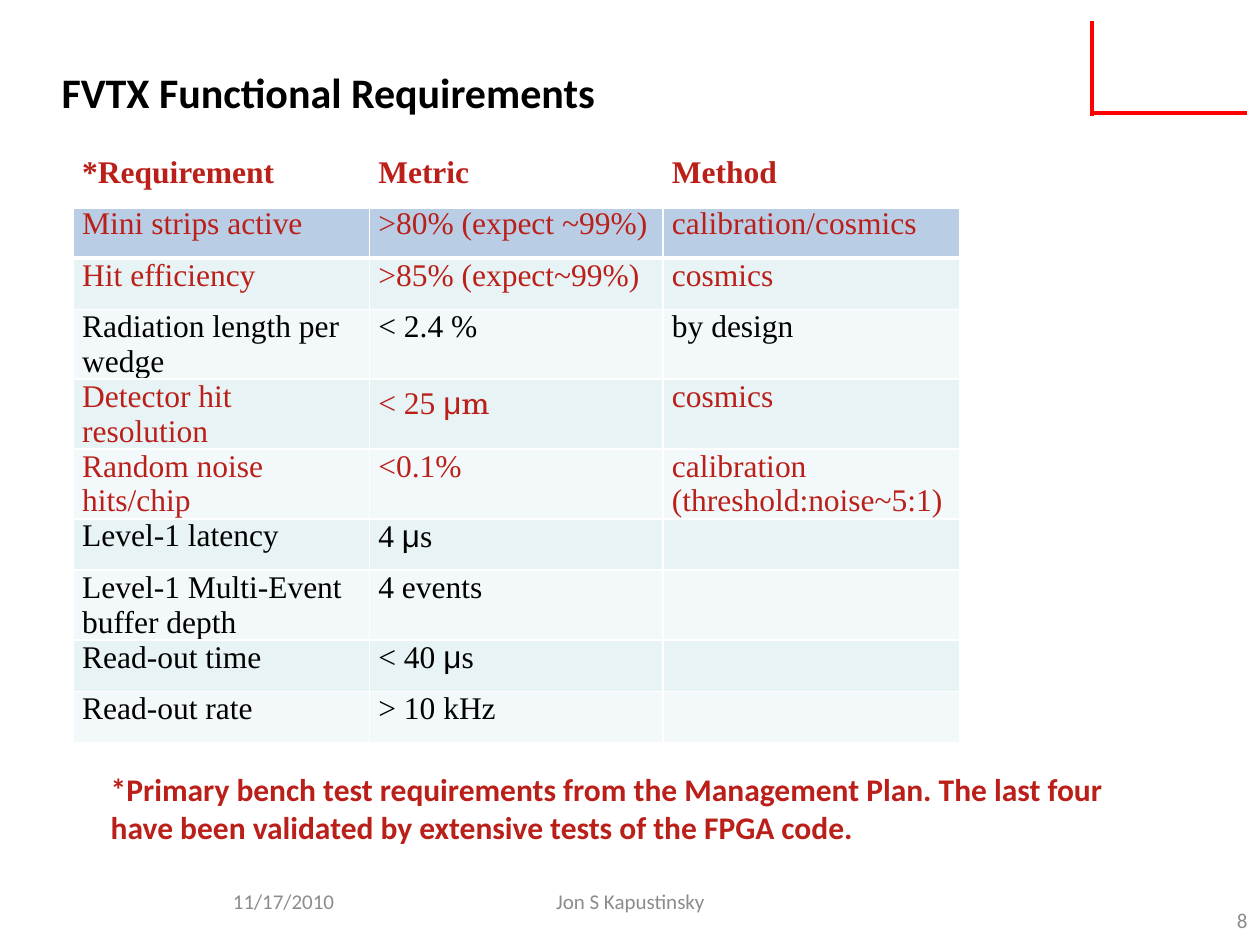
import pptx
import pptx.dml.color
import pptx.enum.shapes
import pptx.enum.text
import pptx.oxml
import pptx.oxml.ns
import pptx.util

Pt = pptx.util.Pt
ALIGN = pptx.enum.text.PP_ALIGN
ANCHOR = pptx.enum.text.MSO_ANCHOR
NS = pptx.oxml.ns.nsdecls("a")
HEX = {"red": "BA1F19", "black": "000000", "gray": "8C8C8C", "line": "FF0000",
       "white": "FFFFFF", "blue": "B9CDE5", "mint": "E7F3F4", "pale": "F3F9FA"}


def style(font, size, color, name, bold=False):
    font.size, font.name, font.bold = Pt(size), name, bold
    font.color.rgb = pptx.dml.color.RGBColor.from_string(HEX[color])


def edge(cell, side, width):
    """Draw a white border on one side (L, R, T or B) of a cell."""
    cell._tc.get_or_add_tcPr().append(pptx.oxml.parse_xml(
        f'<a:ln{side} {NS} w="{Pt(width)}"><a:solidFill>'
        f'<a:srgbClr val="{HEX["white"]}"/></a:solidFill></a:ln{side}>'))


deck = pptx.Presentation()
deck.slide_width, deck.slide_height = Pt(720), Pt(540)
slide = deck.slides.add_slide(deck.slide_layouts[6])

# Red corner
for ends in [(622.8, 64.8, 712.8, 64.8), (624.2, 12.2, 624.2, 66.2)]:
    line = slide.shapes.add_connector(
        pptx.enum.shapes.MSO_CONNECTOR.STRAIGHT, *map(Pt, ends))
    line.line.width = Pt(2.25)
    line.line.color.rgb = pptx.dml.color.RGBColor.from_string(HEX["line"])
    line._element.spPr.append(pptx.oxml.parse_xml(f"<a:effectLst {NS}/>"))

# Requirements table
rows = [
    ("red", "*Requirement", "Metric", "Method"),
    ("red", "Mini strips active", ">80% (expect ~99%)", "calibration/cosmics"),
    ("red", "Hit efficiency", ">85% (expect~99%)", "cosmics"),
    ("black", "Radiation length per wedge", "< 2.4 %", "by design"),
    ("red", "Detector hit resolution", "< 25 μm", "cosmics"),
    ("red", "Random noise hits/chip", "<0.1%", "calibration\n(threshold:noise~5:1)"),
    ("black", "Level-1 latency", "4 μs", ""),
    ("black", "Level-1 Multi-Event buffer depth", "4 events", ""),
    ("black", "Read-out time", "< 40 μs", ""),
    ("black", "Read-out rate", "> 10 kHz", ""),
]
widths = [169.2, 167.8, 169.9]
high = 29.4
table = slide.shapes.add_table(len(rows), 3, Pt(41.8), Pt(88.6),
                               Pt(sum(widths)), Pt(high * len(rows))).table
for col, width in zip(table.columns, widths):
    col.width = Pt(width)

for i, (color, *texts) in enumerate(rows):
    table.rows[i].height = Pt(high)
    for j, text in enumerate(texts):
        cell = table.cell(i, j)
        cell.margin_left = cell.margin_right = Pt(5.2)
        cell.margin_top = cell.margin_bottom = 0
        edge(cell, "L", 1)
        edge(cell, "R", 1)
        edge(cell, "T", 3 if i in (1, 2) else 1)
        edge(cell, "B", 3 if i in (0, 1) else 1)
        if i == 0:
            cell.fill.background()
        else:
            fill = "blue" if i == 1 else ("pale", "mint")[(i + 1) % 2]
            cell.fill.solid()
            cell.fill.fore_color.rgb = pptx.dml.color.RGBColor.from_string(HEX[fill])
        frame = cell.text_frame
        frame.text = text
        for para in frame.paragraphs:
            if "μ" in text:
                para.clear()
                for part in text.partition("μ"):
                    run = para.add_run()
                    run.text = part
                    if part == "μ":
                        run.font.name = "Arial"
                    elif part == "m":
                        run.font.name = "TeX Gyre Schola"
            style(para.font, 18, color, "Times New Roman", i == 0)

# Title, note and footer
note = ("*Primary bench test requirements from the Management Plan. "
        "The last four have been validated by extensive tests of the FPGA code.")
for text, spot, size, color, align, anchor in [
    (note, (56.2, 436.3, 590.4, 51.1), 18, "red", ALIGN.LEFT, ANCHOR.TOP),
    ("FVTX Functional Requirements", (28.1, 34.6, 401.8, 36), 24, "black",
     ALIGN.LEFT, ANCHOR.TOP),
    ("11/17/2010", (126, 500.4, 77.8, 28.8), 12, "gray", ALIGN.LEFT, ANCHOR.MIDDLE),
    ("Jon S Kapustinsky", (246.2, 500.4, 228.2, 28.8), 12, "gray",
     ALIGN.CENTER, ANCHOR.MIDDLE),
    ("8", (684, 511.2, 36, 28.8), 12, "gray", ALIGN.RIGHT, ANCHOR.MIDDLE),
]:
    frame = slide.shapes.add_textbox(*map(Pt, spot)).text_frame
    frame.word_wrap = True
    frame.vertical_anchor = anchor
    para = frame.paragraphs[0]
    para.text = text
    para.alignment = align
    style(para.font, size, color, "Calibri", size > 12)

deck.save("out.pptx")
